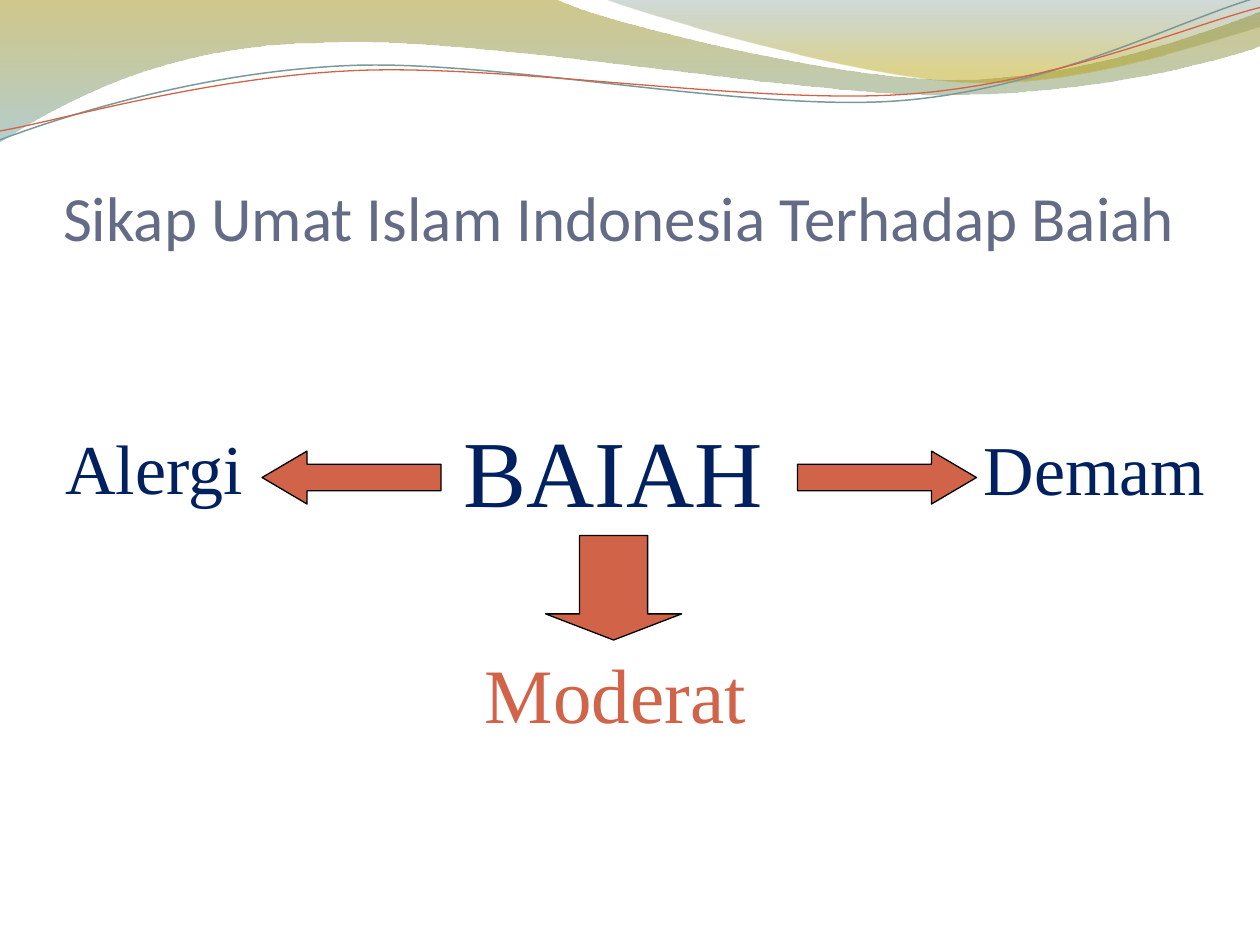
import math

from lxml import etree
from pptx import Presentation
from pptx.dml.color import RGBColor
from pptx.enum import shapes as kinds, text
from pptx.oxml.ns import qn
from pptx.util import Inches, Pt

NAVY, RUST, SLATE, BLACK = "002060", "D16349", "646B86", "000000"
SERIF = "Times New Roman"
TILT = 357.3


def rgb(hex_code):
    """Turn a hex string into a colour."""
    return RGBColor.from_string(hex_code)


def turn(point, center, degrees):
    """Rotate a point clockwise about a centre."""
    x, y = point[0] - center[0], point[1] - center[1]
    angle = math.radians(degrees)
    return (center[0] + x * math.cos(angle) - y * math.sin(angle),
            center[1] + x * math.sin(angle) + y * math.cos(angle))


def add_outline(slide, box, start, legs, closed):
    """Draw straight legs (one point) and cubic legs (three points), in inches."""
    left, top = box
    points = [start] + [point for leg in legs for point in leg]
    emu = [(left + Inches(x), top + Inches(y)) for x, y in points]
    builder = slide.shapes.build_freeform(*emu[0], scale=1.0)
    builder.add_line_segments(emu[1:], close=closed)
    outline = builder.convert_to_shape()
    outline.shadow.inherit = False
    segments = iter(list(outline.element.spPr.iter(qn("a:lnTo"))))
    for leg in legs:
        parts = [next(segments) for _ in leg]
        if len(parts) == 3:
            curve = etree.Element(qn("a:cubicBezTo"))
            parts[0].addprevious(curve)
            for part in parts:
                curve.append(part[0])
                part.getparent().remove(part)
    return outline


def add_band(slide, box, start, legs, stops):
    """Draw a wave band with a translucent downward gradient."""
    band = add_outline(slide, box, start, legs, True)
    band.line.fill.background()
    band.fill.gradient()
    band.fill.gradient_angle = 270
    for stop, (position, color, _) in zip(band.fill.gradient_stops, stops):
        stop.position = position
        stop.color.rgb = rgb(color)
    colors = band.element.spPr.iter(qn("a:srgbClr"))
    for color_element, (_, _, opacity) in zip(colors, stops):
        alpha = etree.SubElement(color_element, qn("a:alpha"))
        alpha.set("val", str(opacity * 1000))


def add_strand(slide, box, center, start, legs, color, width):
    """Draw a thin open wave line, tilted about its centre."""
    level_start = turn(start, center, -TILT)
    level_legs = [[turn(point, center, -TILT) for point in leg] for leg in legs]
    strand = add_outline(slide, box, level_start, level_legs, False)
    strand.rotation = TILT
    strand.fill.background()
    strand.line.color.rgb = rgb(color)
    strand.line.width = Pt(width)


def add_waves(slide, box):
    """Place the two bands and two strands of the header."""
    wide_band = [
        [(4.4, -0.01)],
        [(4.76, 0.17), (6.64, 0.63), (7.58, 0.63)],
        [(8.53, 0.63), (9.58, 0.26), (10, 0.09)],
        [(10.01, 0.36)],
        [(9.83, 0.44), (8.7, 0.76), (7.46, 0.75)],
        [(6.22, 0.75), (3.82, 0.28), (2.57, 0.34)],
        [(1.29, 0.35), (0.46, 0.83), (-0.01, 1.13)],
        [(0, -0.01)]]
    add_band(slide, box, (0, -0.01), wide_band,
             [(0, "978500", 45), (1, "77A5A6", 55)])
    corner_band = [
        [(5.09, 0.11), (6.82, 0.62), (7.69, 0.65)],
        [(8.56, 0.69), (9.61, 0.32), (10, 0.21)],
        [(10, 0)],
        [(4.79, -0.01)]]
    add_band(slide, box, (4.79, -0.01), corner_band,
             [(0, "648484", 30), (0.8, "B49F00", 45)])
    teal_strand = [
        [(0.48, 0.93), (1.58, 0.57), (2.77, 0.52)],
        [(3.95, 0.47), (5.93, 0.89), (7.13, 0.8)],
        [(8.33, 0.71), (9.38, 0.15), (9.98, -0.02)]]
    add_strand(slide, box, (4.99, 0.57), (0, 1.11), teal_strand, "7C999A", 0.85)
    rust_strand = [
        [(0.47, 0.96), (1.64, 0.61), (2.83, 0.56)],
        [(4.03, 0.51), (5.97, 0.83), (7.17, 0.75)],
        [(8.36, 0.67), (9.41, 0.21), (10, 0.06)]]
    add_strand(slide, box, (5, 0.59), (0, 1.04), rust_strand, RUST, 0.75)


def write(frame, words, size, font, color):
    """Add one formatted run to the first paragraph."""
    run = frame.paragraphs[0].add_run()
    run.text = words
    run.font.size = Pt(size)
    run.font.name = font
    run.font.color.rgb = rgb(color)


def add_title(slide, box, words):
    """Place the title in front of the waves."""
    title = slide.shapes.title
    title.left, title.top, title.width, title.height = box
    title.element.getparent().append(title.element)
    frame = title.text_frame
    frame.auto_size = text.MSO_AUTO_SIZE.NONE
    frame.word_wrap = True
    frame.vertical_anchor = text.MSO_ANCHOR.BOTTOM
    frame.margin_left = frame.margin_right = frame.margin_bottom = 0
    frame.margin_top = Inches(0.05)
    frame.paragraphs[0].alignment = text.PP_ALIGN.LEFT
    write(frame, words, 36, "Calibri", SLATE)


def add_diagram(slide, box):
    """Place the central word, its three attitudes and the arrows."""
    left, top = box
    labels = [("BAIAH", 3.16, 0, 2.58, 1, 54, NAVY),
              ("Alergi", 0, 0.09, 1.62, 0.77, 40, NAVY),
              ("Demam", 7.29, 0.1, 1.96, 0.77, 40, NAVY),
              ("Moderat", 3.33, 1.85, 2.27, 0.83, 44, RUST)]
    for words, x, y, width, height, size, color in labels:
        label = slide.shapes.add_textbox(left + Inches(x), top + Inches(y),
                                         Inches(width), Inches(height))
        label.text_frame.word_wrap = False
        label.text_frame.auto_size = text.MSO_AUTO_SIZE.SHAPE_TO_FIT_TEXT
        write(label.text_frame, words, size, SERIF, color)

    preset = kinds.MSO_SHAPE
    arrows = [(preset.RIGHT_ARROW, 5.91, 0.35, 1.42, 0.42, 0.85),
              (preset.LEFT_ARROW, 1.66, 0.35, 1.42, 0.42, 0.85),
              (preset.DOWN_ARROW, 3.91, 1.02, 1.08, 0.83, 0.25)]
    for kind, x, y, width, height, head in arrows:
        arrow = slide.shapes.add_shape(kind, left + Inches(x), top + Inches(y),
                                       Inches(width), Inches(height))
        arrow.adjustments[0] = 0.5
        arrow.adjustments[1] = head
        arrow.shadow.inherit = False
        arrow.fill.solid()
        arrow.fill.fore_color.rgb = rgb(RUST)
        arrow.line.color.rgb = rgb(BLACK)
        arrow.line.width = Pt(0.75)


def main():
    """Build the slide and save it."""
    deck = Presentation()
    deck.slide_width, deck.slide_height = Inches(10), Inches(7.5)
    slide = deck.slides.add_slide(deck.slide_layouts.get_by_name("Title Only"))
    add_waves(slide, (0, 0))
    add_title(slide, (Inches(0.5), Inches(0.77), Inches(9), Inches(1.25)),
              "Sikap Umat Islam Indonesia Terhadap Baiah")
    add_diagram(slide, (Inches(0.42), Inches(3.23)))
    deck.save("out.pptx")


if __name__ == "__main__":
    main()
